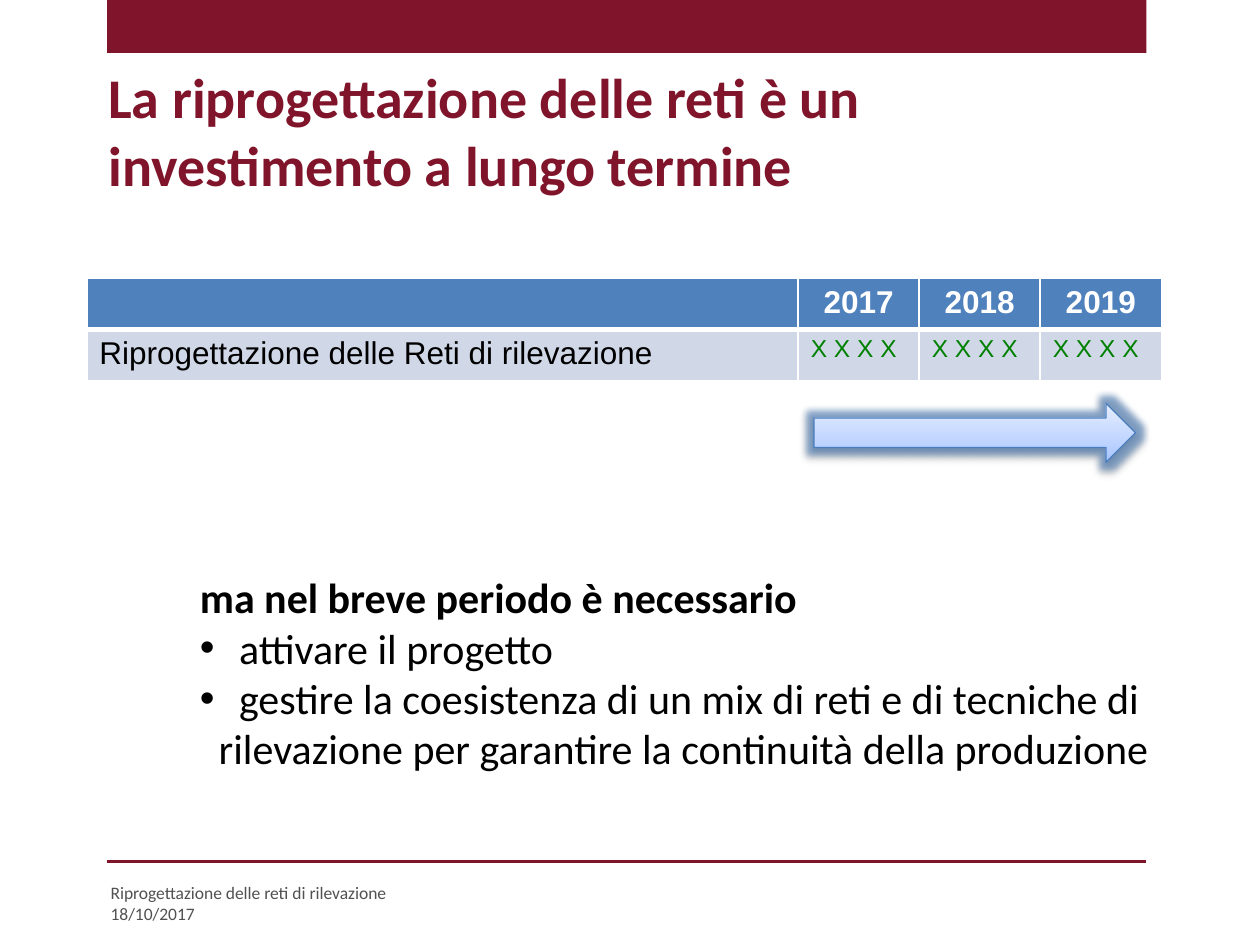
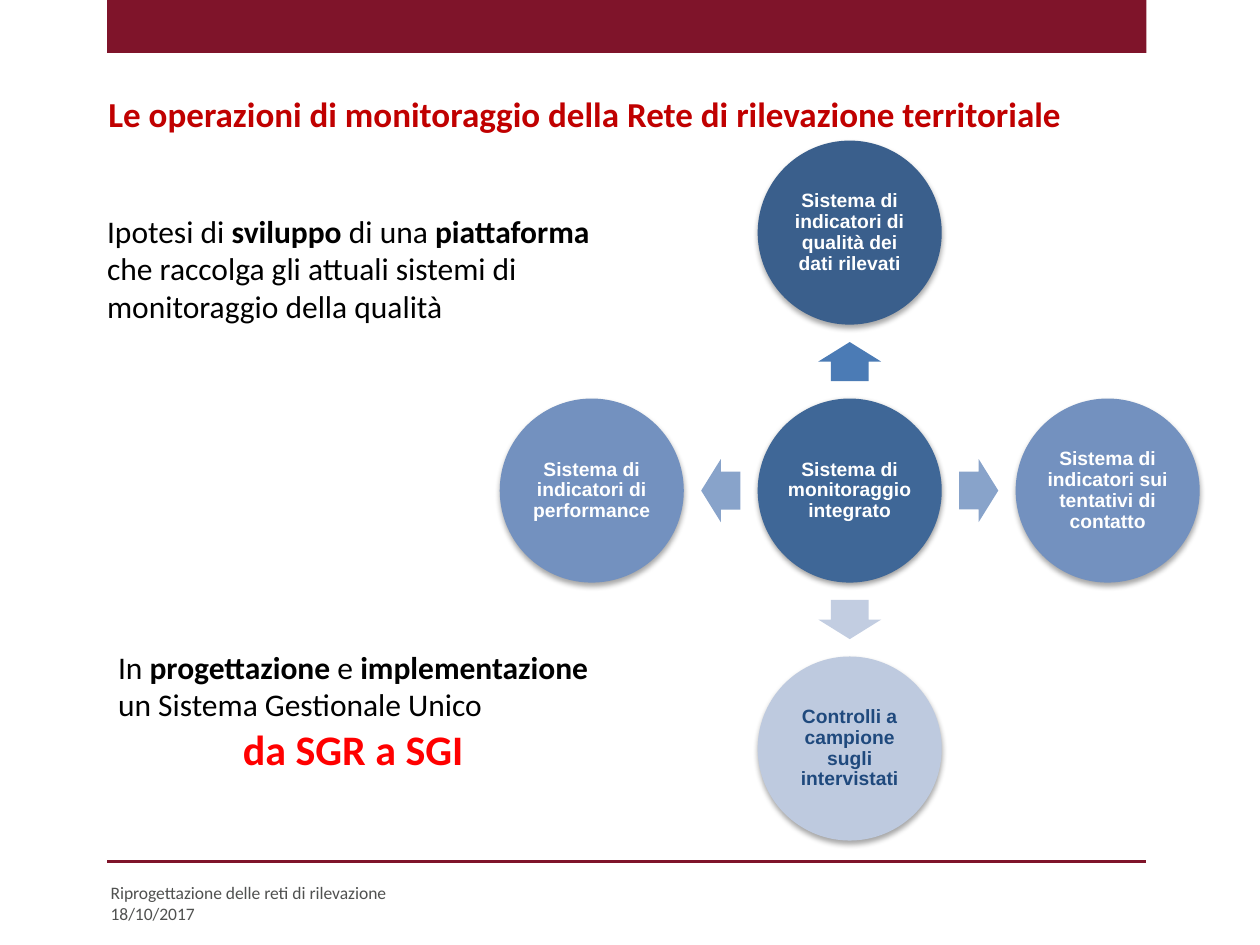
from dataclasses import dataclass

from lxml import etree
from pptx import Presentation
from pptx.dml.color import RGBColor
from pptx.enum.shapes import MSO_CONNECTOR, MSO_SHAPE
from pptx.enum.text import MSO_ANCHOR, MSO_AUTO_SIZE, PP_ALIGN
from pptx.oxml.ns import qn
from pptx.util import Cm, Pt

RECT, DISC, ARROW = MSO_SHAPE.RECTANGLE, MSO_SHAPE.OVAL, MSO_SHAPE.RIGHT_ARROW
LINE = MSO_CONNECTOR.STRAIGHT
TOP, MIDDLE = MSO_ANCHOR.TOP, MSO_ANCHOR.MIDDLE
LEFT, CENTER = PP_ALIGN.LEFT, PP_ALIGN.CENTER
NO_FIT = MSO_AUTO_SIZE.NONE

INK = {
    "wine": "7F142A", "red": "C00000", "alert": "FF0000", "foot": "505150",
    "black": "000000", "white": "FFFFFF", "navy": "1F497D", "green": "008000",
    "head": "4F81BD", "row": "D0D8E8", "edge": "4B7EBC",
    "hub": "3F6797", "north": "3A5F8C", "side": "7391BF", "south": "BECADF",
    "up": "4B7BB5", "flank": "88A3CA", "down": "C2CDE1",
    "deep": "A4C4FF", "mid": "BFD4FF", "pale": "E6EEFF",
}
SANS, BODY = "Arial", "Calibri"
MARGIN, RIGHT = 2.16, 23.11


@dataclass
class Box:
    x: float
    y: float
    w: float
    h: float

    def place(self):
        return Cm(self.x), Cm(self.y), Cm(self.w), Cm(self.h)


@dataclass
class Type:
    size: float
    ink: str = "black"
    bold: bool = False
    face: str = BODY


@dataclass
class Node:
    label: str
    fill: str
    arrow: str
    turn: int
    dx: int
    dy: int
    ink: str = "white"


NODES = [
    Node("Sistema di indicatori di qualità dei dati rilevati", "north", "up", 270, 0, -1),
    Node("Sistema di indicatori sui tentativi di contatto", "side", "flank", 0, 1, 0),
    Node("Controlli a campione sugli intervistati", "south", "down", 90, 0, 1, "navy"),
    Node("Sistema di indicatori di performance", "side", "flank", 180, -1, 0),
]
HUB_X, HUB_Y, STEP, DISC_D = 17.13, 9.89, 5.2, 3.71
ARROW_W, ARROW_H = 0.79, 1.27


def rgb(name: str) -> RGBColor:
    return RGBColor.from_string(INK[name])


def sub(parent, tag: str, **attrs):
    item = etree.SubElement(parent, qn(tag))
    for key, value in attrs.items():
        item.set(key, str(value))
    return item


def tint(parent, name: str, alpha: int = 100) -> None:
    clr = sub(parent, "a:srgbClr", val=INK[name])
    if alpha < 100:
        sub(clr, "a:alpha", val=alpha * 1000)


def style(para, kind: Type, align=LEFT) -> None:
    para.alignment = align
    for run in para.runs:
        font = run.font
        font.size, font.name = Pt(kind.size), kind.face
        font.bold = kind.bold or bool(font.bold)
        font.color.rgb = rgb(kind.ink)


def fill_line(para, text: str, kind: Type, align=LEFT) -> None:
    for i, part in enumerate(text.split("*")):
        if part:
            run = para.add_run()
            run.text = part
            run.font.bold = i % 2 == 1
    style(para, kind, align)


def add_text(slide, box: Box, lines: list[str], kind: Type, wrap: bool = True):
    frame = slide.shapes.add_textbox(*box.place()).text_frame
    frame.word_wrap = wrap
    for i, text in enumerate(lines):
        para = frame.add_paragraph() if i else frame.paragraphs[0]
        fill_line(para, text, kind)
    return frame


def add_form(slide, form, box: Box, fill: str):
    shape = slide.shapes.add_shape(form, *box.place())
    shape.fill.solid()
    shape.fill.fore_color.rgb = rgb(fill)
    shape.line.fill.background()
    shape.shadow.inherit = False
    return shape


def cast(shape, alpha: int, dist: int, glow: bool = False) -> None:
    fx = shape._element.spPr.find(qn("a:effectLst"))
    if glow:
        tint(sub(fx, "a:glow", rad=101600), "head", 60)
    tint(sub(fx, "a:outerShdw", blurRad=40000, dist=dist, dir=5400000,
             rotWithShape=0), "black", alpha)


def indent(para, left: float, hang: float = 0) -> None:
    props = para._p.get_or_add_pPr()
    props.set("marL", str(Cm(left)))
    props.set("indent", str(-Cm(hang)))
    if hang:
        sub(props, "a:buFont", typeface=SANS)
        sub(props, "a:buChar", char="•")


def set_cell(cell, text: str, fill: str, kind: Type, align, base: float) -> None:
    props = cell._tc.get_or_add_tcPr()
    for side, width in (("L", 1), ("R", 1), ("T", 1), ("B", base)):
        edge = sub(props, f"a:ln{side}", w=Pt(width))
        tint(sub(edge, "a:solidFill"), "white")
    cell.fill.solid()
    cell.fill.fore_color.rgb = rgb(fill)
    cell.text = text
    style(cell.text_frame.paragraphs[0], kind, align)


def add_page(deck, title: str, box: Box, kind: Type):
    slide = deck.slides.add_slide(deck.slide_layouts[5])
    add_form(slide, RECT, Box(MARGIN, 0, RIGHT - MARGIN, 1.07), "wine")
    rule = slide.shapes.add_connector(LINE, Cm(MARGIN), Cm(17.37), Cm(RIGHT), Cm(17.37))
    rule.line.color.rgb = rgb("wine")
    rule.line.width = Pt(2)
    sub(rule._element.spPr, "a:effectLst")
    head = slide.shapes.title
    head.left, head.top, head.width, head.height = box.place()
    frame = head.text_frame
    frame.text = title
    frame.word_wrap, frame.auto_size = True, NO_FIT
    frame.vertical_anchor = TOP
    style(frame.paragraphs[0], kind)
    add_text(slide, Box(1.98, 17.65, 8.38, 1.12),
             ["Riprogettazione delle reti di rilevazione", "18/10/2017"], Type(10, "foot"))
    return slide


def add_plan(slide) -> None:
    rows = [["", "2017", "2018", "2019"],
            ["Riprogettazione delle Reti di rilevazione"] + ["X X X X"] * 3]
    grid = slide.shapes.add_table(2, 4, *Box(1.75, 5.61, 21.66, 2.06).place()).table
    for col, width in zip(grid.columns, [14.34] + [2.44] * 3):
        col.width = Cm(width)
    for c, text in enumerate(rows[0]):
        set_cell(grid.cell(0, c), text, "head", Type(18, "white", True, SANS), CENTER, 3)
    for c, text in enumerate(rows[1]):
        kind = Type(14, "green", face=SANS) if c else Type(18, face=SANS)
        set_cell(grid.cell(1, c), text, "row", kind, LEFT, 1)


def add_span(slide) -> None:
    arrow = add_form(slide, ARROW, Box(16.41, 8.13, 6.48, 1.19), "mid")
    arrow.line.color.rgb = rgb("edge")
    arrow.line.width = Pt(0.75)
    props = arrow._element.spPr
    props.remove(props.find(qn("a:solidFill")))
    grad = etree.Element(qn("a:gradFill"))
    stops = sub(grad, "a:gsLst")
    for pos, name in ((0, "deep"), (35, "mid"), (100, "pale")):
        tint(sub(stops, "a:gs", pos=pos * 1000), name)
    sub(grad, "a:lin", ang=270 * 60000, scaled=1)
    props.find(qn("a:prstGeom")).addnext(grad)
    cast(arrow, 38, 20000, glow=True)


def add_disc(slide, x: float, y: float, label: str, fill: str, ink: str):
    box = Box(x - DISC_D / 2, y - DISC_D / 2, DISC_D, DISC_D)
    disc = add_form(slide, DISC, box, fill)
    frame = disc.text_frame
    frame.margin_left = frame.margin_right = Cm(0.05)
    frame.margin_top = frame.margin_bottom = Cm(0.05)
    frame.word_wrap, frame.vertical_anchor = True, MIDDLE
    frame.text = label
    para = frame.paragraphs[0]
    para.line_spacing = 0.9
    style(para, Type(11, ink, True, SANS), CENTER)
    return disc


def add_wheel(slide) -> None:
    cast(add_disc(slide, HUB_X, HUB_Y, "Sistema di monitoraggio integrato",
                  "hub", "white"), 38, 20000)
    for node in NODES:
        x, y = HUB_X + node.dx * STEP / 2, HUB_Y + node.dy * STEP / 2
        box = Box(x - ARROW_W / 2, y - ARROW_H / 2, ARROW_W, ARROW_H)
        arrow = add_form(slide, ARROW, box, node.arrow)
        arrow.adjustments[0], arrow.adjustments[1] = 0.6, 0.5
        arrow.rotation = node.turn
        disc = add_disc(slide, HUB_X + node.dx * STEP, HUB_Y + node.dy * STEP,
                        node.label, node.fill, node.ink)
        cast(disc, 35, 23000)


def build_plan(deck) -> None:
    slide = add_page(deck, "La riprogettazione delle reti è un investimento a lungo termine",
                     Box(1.93, 1.14, 20.98, 2.82), Type(32, "wine", True))
    add_plan(slide)
    add_span(slide)
    frame = add_text(slide, Box(3.78, 11.4, 21.16, 4.34), [
        "*ma nel breve periodo è necessario*",
        "attivare il progetto",
        "gestire la coesistenza di un mix di reti e di tecniche di",
        "rilevazione per garantire la continuità della produzione"], Type(24))
    for para in frame.paragraphs[1:3]:
        indent(para, 0.79, 0.79)
    indent(frame.paragraphs[3], 0.38)


def build_wheel(deck) -> None:
    slide = add_page(deck, "Le operazioni di monitoraggio della Rete di rilevazione territoriale",
                     Box(1.93, 1.73, 21.06, 1.12), Type(20, "red", True))
    add_wheel(slide)
    add_text(slide, Box(1.91, 4.14, 10.34, 2.57), [
        "Ipotesi di *sviluppo* di una *piattaforma*",
        "che raccolga gli attuali sistemi di",
        "monitoraggio della qualità"], Type(18), wrap=False)
    frame = add_text(slide, Box(2.13, 12.93, 10.08, 2.82), [
        "In *progettazione* e *implementazione*",
        "un Sistema Gestionale Unico",
        "da SGR a SGI"], Type(18), wrap=False)
    style(frame.paragraphs[2], Type(24, "alert", True), CENTER)


def main() -> None:
    deck = Presentation()
    deck.slide_width, deck.slide_height = Cm(25.4), Cm(19.05)
    build_plan(deck)
    build_wheel(deck)
    deck.save("out.pptx")


if __name__ == "__main__":
    main()
